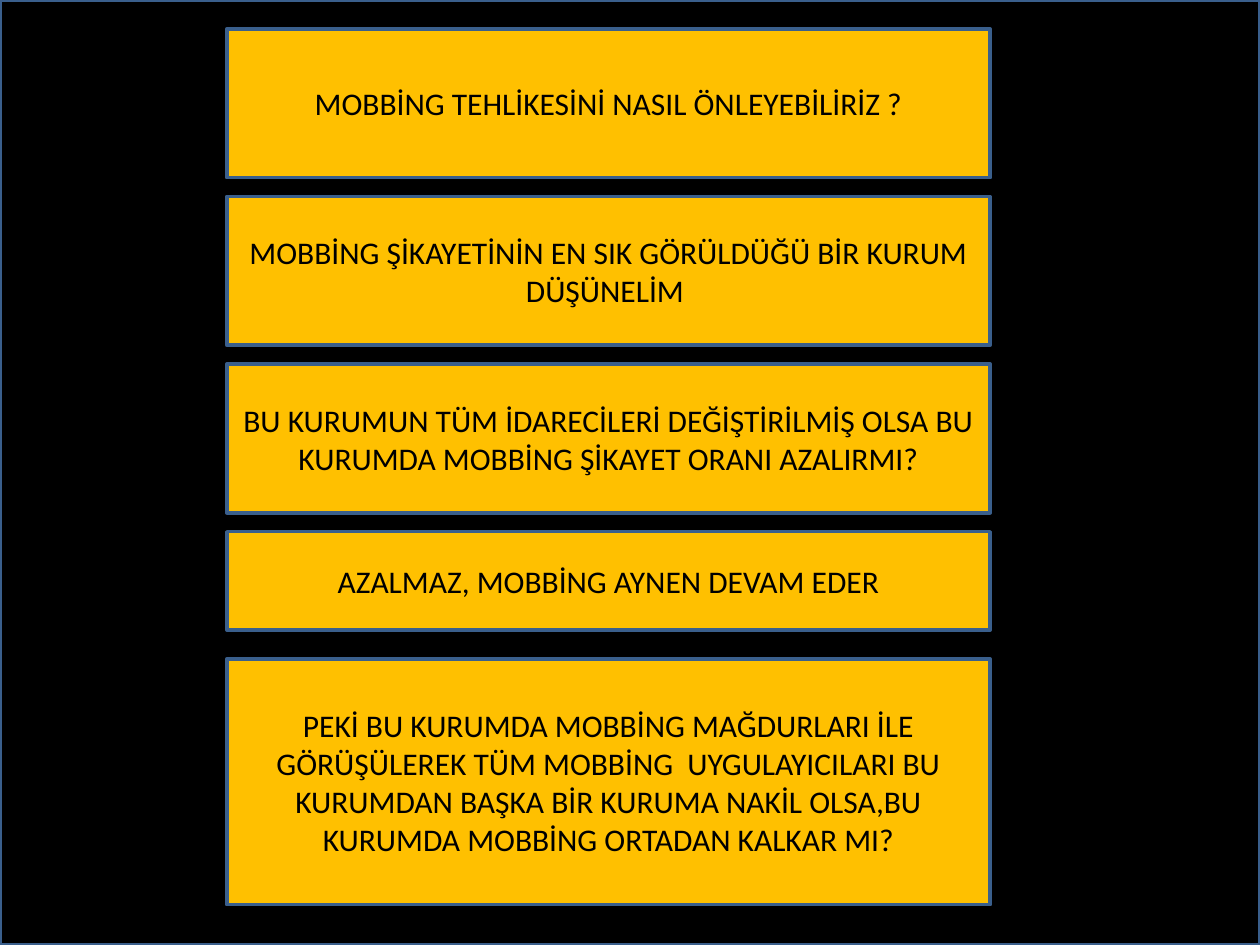
import pptx
import pptx.dml.color
import pptx.enum.shapes
import pptx.enum.text
import pptx.util

BLACK = pptx.dml.color.RGBColor(0x00, 0x00, 0x00)
AMBER = pptx.dml.color.RGBColor(0xFF, 0xC0, 0x00)
STEEL_BLUE = pptx.dml.color.RGBColor(0x3A, 0x5F, 0x8C)

COLUMNS, ROWS = 100, 75
CARD_LEFT, CARD_WIDTH = 18, 60.6
FIRST_TOP, GAP, LAST_GAP = 2.3, 1.5, 2.3
CARDS = [
    ("MOBBİNG TEHLİKESİNİ NASIL ÖNLEYEBİLİRİZ ?", 11.8, GAP),
    ("MOBBİNG ŞİKAYETİNİN EN SIK GÖRÜLDÜĞÜ BİR KURUM DÜŞÜNELİM ", 11.8, GAP),
    ("BU KURUMUN TÜM İDARECİLERİ DEĞİŞTİRİLMİŞ OLSA BU KURUMDA "
     "MOBBİNG ŞİKAYET ORANI AZALIRMI?", 11.8, GAP),
    ("AZALMAZ, MOBBİNG AYNEN DEVAM EDER", 7.8, LAST_GAP),
    ("PEKİ BU KURUMDA MOBBİNG MAĞDURLARI İLE GÖRÜŞÜLEREK TÜM MOBBİNG  "
     "UYGULAYICILARI BU KURUMDAN BAŞKA BİR KURUMA NAKİL OLSA,BU KURUMDA "
     "MOBBİNG ORTADAN KALKAR MI?", 19.5, 0),
]


class SlideBuilder:
    font_format = {"name": "Calibri", "size": pptx.util.Pt(18)}
    frame_format = {
        "word_wrap": True,
        "vertical_anchor": pptx.enum.text.MSO_ANCHOR.MIDDLE,
    }

    def __init__(self, presentation):
        self.column = presentation.slide_width / COLUMNS
        self.row = presentation.slide_height / ROWS
        self.slide = presentation.slides.add_slide(presentation.slide_layouts[6])

    def panel(self, left, top, width, height, color):
        shape = self.slide.shapes.add_shape(
            pptx.enum.shapes.MSO_SHAPE.RECTANGLE,
            round(left * self.column), round(top * self.row),
            round(width * self.column), round(height * self.row),
        )
        shape.shadow.inherit = False
        shape.fill.solid()
        shape.fill.fore_color.rgb = color
        shape.line.color.rgb = STEEL_BLUE
        shape.line.width = pptx.util.Pt(2)
        return shape

    def card(self, top, height, text):
        frame = self.panel(CARD_LEFT, top, CARD_WIDTH, height, AMBER).text_frame
        for name, value in self.frame_format.items():
            setattr(frame, name, value)
        paragraph = frame.paragraphs[0]
        paragraph.alignment = pptx.enum.text.PP_ALIGN.CENTER
        run = paragraph.add_run()
        run.text = text
        for name, value in self.font_format.items():
            setattr(run.font, name, value)
        run.font.color.rgb = BLACK


def main():
    presentation = pptx.Presentation()
    presentation.slide_width = pptx.util.Inches(10)
    presentation.slide_height = pptx.util.Inches(7.5)
    builder = SlideBuilder(presentation)
    builder.panel(0, 0, COLUMNS, ROWS, BLACK)
    top = FIRST_TOP
    for text, height, gap in CARDS:
        builder.card(top, height, text)
        top += height + gap
    presentation.save("out.pptx")


if __name__ == "__main__":
    main()
